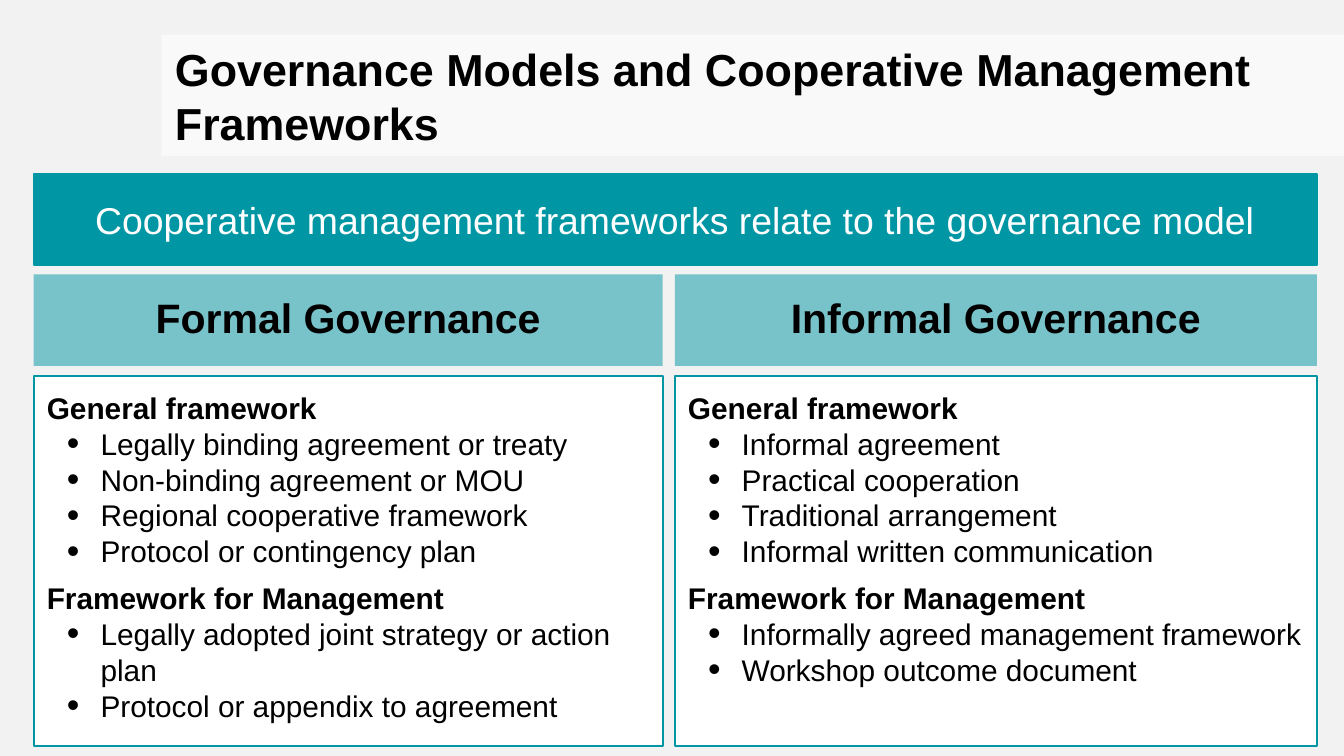
"""Build the governance models slide."""
import pptx
import pptx.util
import pptx.dml.color
import pptx.enum.shapes
import pptx.enum.text
import pptx.oxml.ns
from lxml import etree

Pt = pptx.util.Pt
RGB = pptx.dml.color.RGBColor
ALIGN = pptx.enum.text.PP_ALIGN
ANCHOR = pptx.enum.text.MSO_ANCHOR
BLACK = RGB(0, 0, 0)
WHITE = RGB(255, 255, 255)
TEAL = RGB(0x00, 0x96, 0xA4)
GREY = RGB(0xF2, 0xF2, 0xF2)

GENERAL, MANAGE = "General framework", "Framework for Management"
COLUMNS = [
    (18, 337, "Formal Governance", {
        GENERAL: ["Legally binding agreement or treaty",
                  "Non-binding agreement or MOU",
                  "Regional cooperative framework",
                  "Protocol or contingency plan"],
        MANAGE: ["Legally adopted joint strategy or action plan",
                 "Protocol or appendix to agreement"]}),
    (361.5, 344, "Informal Governance", {
        GENERAL: ["Informal agreement",
                  "Practical cooperation",
                  "Traditional arrangement",
                  "Informal written communication"],
        MANAGE: ["Informally agreed management framework",
                 "Workshop outcome document"]}),
]


def paint(shape, color, alpha=None):
    """Fill a shape with a colour, see-through by alpha percent."""
    shape.fill.solid()
    shape.fill.fore_color.rgb = color
    if alpha:
        tag = shape.fill._xPr.find(".//" + pptx.oxml.ns.qn("a:srgbClr"))
        etree.SubElement(tag, pptx.oxml.ns.qn("a:alpha"), val=str(alpha * 1000))


def frame(shape, inset=7.2, anchor=ANCHOR.MIDDLE):
    """Set the text margins and anchor, and return the text frame."""
    text = shape.text_frame
    text.word_wrap = True
    text.auto_size = pptx.enum.text.MSO_AUTO_SIZE.NONE
    text.vertical_anchor = anchor
    text.margin_left = text.margin_right = Pt(7.2)
    text.margin_top = text.margin_bottom = Pt(inset)
    return text


def write(text, words, size=16, color=BLACK, bold=False, align=ALIGN.LEFT,
          before=0, line=None, bullet=False):
    """Add a formatted paragraph to a text frame."""
    para = text.paragraphs[0]
    if para.text:
        para = text.add_paragraph()
    para.alignment = align
    para.space_before = Pt(before)
    if line:
        para.line_spacing = line
    if bullet:
        props = para._p.get_or_add_pPr()
        props.set("marL", str(Pt(28.8)))
        props.set("indent", str(-Pt(18)))
        tint = etree.SubElement(props, pptx.oxml.ns.qn("a:buClr"))
        etree.SubElement(tint, pptx.oxml.ns.qn("a:srgbClr"), val=str(BLACK))
        etree.SubElement(props, pptx.oxml.ns.qn("a:buSzPct"), val="120000")
        etree.SubElement(props, pptx.oxml.ns.qn("a:buFont"), typeface="Arial")
        etree.SubElement(props, pptx.oxml.ns.qn("a:buChar"), char="•")
    run = para.add_run()
    run.text = words
    run.font.name = "Arial"
    run.font.size = Pt(size)
    run.font.bold = bold
    run.font.color.rgb = color


def panel(slide, box, color, alpha=None, edge=None):
    """Add a filled rectangle with an optional outline."""
    shape = slide.shapes.add_shape(
        pptx.enum.shapes.MSO_SHAPE.RECTANGLE, *map(Pt, box))
    shape.shadow.inherit = False
    paint(shape, color, alpha)
    if edge:
        shape.line.color.rgb = edge
        shape.line.width = Pt(1)
    else:
        shape.line.fill.background()
    return shape


def title(slide, box):
    """Place the slide title on its pale band."""
    shape = slide.shapes.title
    shape.left, shape.top, shape.width, shape.height = map(Pt, box)
    paint(shape, WHITE, 55)
    write(frame(shape, 3.6), "Governance Models and Cooperative Management Frameworks",
          size=24, bold=True)


def banner(slide, box):
    """Place the main statement across both columns."""
    shape = panel(slide, box, TEAL, edge=TEAL)
    write(frame(shape), "Cooperative management frameworks relate to the governance model",
          size=20, color=WHITE, align=ALIGN.CENTER)


def column(slide, box, name, groups):
    """Place a heading and the list panel under it."""
    left, top, width, height = box
    head, gap = 49, 5.5
    shape = panel(slide, (left, top, width, head), TEAL, 50)
    write(frame(shape, 3.6), name, size=22, bold=True, align=ALIGN.CENTER, line=0.9)
    drop = head + gap
    shape = panel(slide, (left, top + drop, width, height - drop), WHITE, edge=TEAL)
    text = frame(shape, anchor=ANCHOR.TOP)
    for rank, (label, items) in enumerate(groups.items()):
        write(text, label, bold=True, before=6 if rank else 0)
        for item in items:
            write(text, item, bullet=True)


def main():
    """Build and save the slide."""
    deck = pptx.Presentation()
    deck.slide_width, deck.slide_height = Pt(720), Pt(405)
    slide = deck.slides.add_slide(deck.slide_layouts[5])
    slide.background.fill.solid()
    slide.background.fill.fore_color.rgb = GREY
    banner(slide, (18, 93, 687.5, 49))
    for left, width, name, groups in COLUMNS:
        column(slide, (left, 147, width, 252.5), name, groups)
    title(slide, (86.5, 18.5, 633.5, 65))
    deck.save("out.pptx")


if __name__ == "__main__":
    main()
